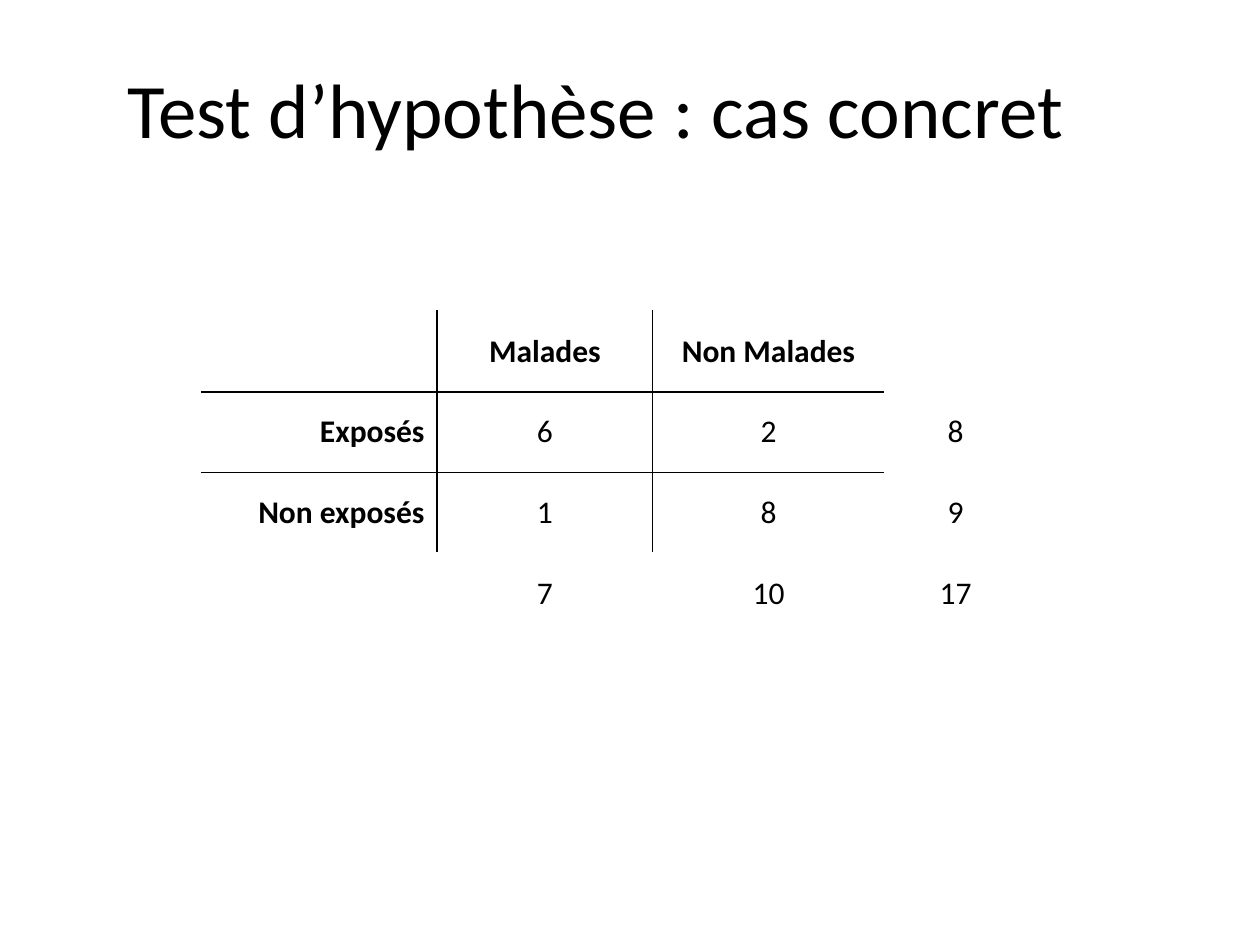
from lxml import etree
from pptx import Presentation
from pptx.dml.color import RGBColor as RGB
from pptx.enum.text import MSO_ANCHOR as ANCHOR, PP_ALIGN as ALIGN
from pptx.oxml.ns import qn
from pptx.util import Inches, Pt

COLORS = {"text": "000000", "rule": "000000", "paper": "FFFFFF"}
FONT = "Calibri"


def add_text(tf, text, size, align, bold=False):
    tf.vertical_anchor = ANCHOR.MIDDLE
    p = tf.paragraphs[0]
    p.alignment = align
    r = p.add_run()
    r.text = text
    r.font.name = FONT
    r.font.size = Pt(size)
    r.font.bold = bold
    r.font.color.rgb = RGB.from_string(COLORS["text"])


def add_border(cell, side, color):
    ln = etree.SubElement(cell._tc.get_or_add_tcPr(), qn(f"a:ln{side}"), w=str(Pt(1)))
    fill = etree.SubElement(ln, qn("a:solidFill"))
    etree.SubElement(fill, qn("a:srgbClr"), val=color)


prs = Presentation()
prs.slide_width, prs.slide_height = Inches(10), Inches(7.5)
s = prs.slides.add_slide(prs.slide_layouts[5])

title = s.shapes.title
title.left, title.top = Inches(0.23), Inches(0.23)
title.width, title.height = Inches(9), Inches(1.25)
add_text(title.text_frame, "Test d’hypothèse : cas concret", 44, ALIGN.CENTER)

rows = [
    ["", "Malades", "Non Malades", ""],
    ["Exposés", "6", "2", "8"],
    ["Non exposés", "1", "8", "9"],
    ["", "7", "10", "17"],
]
col_widths = [1.87, 1.71, 1.84, 1.13]
row_height = 0.64

table = s.shapes.add_table(
    len(rows), len(col_widths), Inches(1.6), Inches(2.47),
    Inches(sum(col_widths)), Inches(row_height * len(rows))).table
table.first_row = table.horz_banding = False
for col, width in zip(table.columns, col_widths):
    col.width = Inches(width)

for i, row in enumerate(rows):
    table.rows[i].height = Inches(row_height)
    for j, text in enumerate(row):
        cell = table.cell(i, j)
        # Rules run between the 3 x 3 block of headings and counts, not the totals
        ruled = {
            "L": i < 3 and j in (1, 2),
            "R": i < 3 and j in (0, 1),
            "T": j < 3 and i in (1, 2),
            "B": j < 3 and i in (0, 1),
        }
        for side, on in ruled.items():
            add_border(cell, side, COLORS["rule" if on else "paper"])
        cell.fill.solid()
        cell.fill.fore_color.rgb = RGB.from_string(COLORS["paper"])
        cell.vertical_anchor = ANCHOR.MIDDLE
        if text:
            add_text(cell.text_frame, text, 18,
                     ALIGN.RIGHT if j == 0 else ALIGN.CENTER,
                     bold=i == 0 or j == 0)

prs.save("out.pptx")
